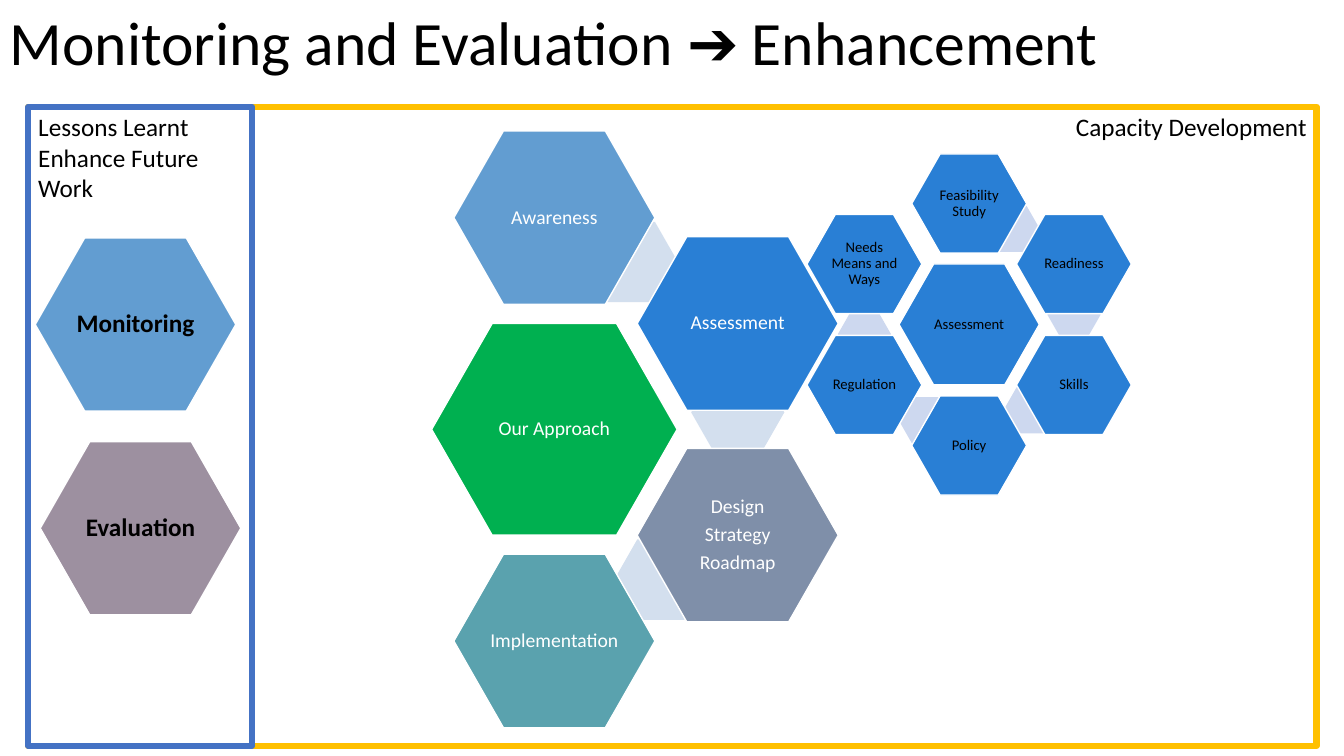
from math import cos, radians, sin

from pptx import Presentation
from pptx.dml.color import RGBColor
from pptx.enum.shapes import MSO_SHAPE
from pptx.enum.text import MSO_ANCHOR, PP_ALIGN
from pptx.util import Pt

HEXAGON, RECT = MSO_SHAPE.HEXAGON, MSO_SHAPE.RECTANGLE
TOP, MIDDLE = MSO_ANCHOR.TOP, MSO_ANCHOR.MIDDLE
LEFT, CENTER, RIGHT = PP_ALIGN.LEFT, PP_ALIGN.CENTER, PP_ALIGN.RIGHT

BLACK = RGBColor(0x00, 0x00, 0x00)
WHITE = RGBColor(0xFF, 0xFF, 0xFF)
GOLD = RGBColor(0xFF, 0xC0, 0x00)
NAVY = RGBColor(0x44, 0x72, 0xC4)
GREEN = RGBColor(0x00, 0xB0, 0x50)
SKY = RGBColor(0x62, 0x9D, 0xD1)
BLUE = RGBColor(0x29, 0x7F, 0xD5)
SLATE = RGBColor(0x7F, 0x8F, 0xA9)
TEAL = RGBColor(0x5A, 0xA2, 0xAE)
MAUVE = RGBColor(0x9D, 0x90, 0xA0)
PALE_BLUE = RGBColor(0xD3, 0xDF, 0xEE)
PALE_INDIGO = RGBColor(0xCD, 0xD8, 0xEF)

FRAME_TEXT = {"size": 18, "color": BLACK}
STEP_TEXT = {"size": 14, "color": WHITE}
PART_TEXT = {"size": 10.5, "color": BLACK}
REVIEW_TEXT = {"size": 18, "color": BLACK, "bold": True}
HEX_SIZE = (143.3, 123.8)


def set_attrs(obj, values):
    """Set each attribute named in the dict."""
    for name, value in values.items():
        setattr(obj, name, value)


def write(s, lines, look, frame, para):
    """Fill a shape with one paragraph per line."""
    tf = s.text_frame
    set_attrs(tf, {"word_wrap": True, **frame})
    for i, line in enumerate(lines):
        p = tf.add_paragraph() if i else tf.paragraphs[0]
        set_attrs(p, para)
        r = p.add_run()
        r.text = line
        set_attrs(r.font, {"name": "Calibri", "size": Pt(look["size"]),
                           "bold": look.get("bold", False)})
        r.font.color.rgb = look["color"]


def add_shape(sp, kind, box, fill=None, line=None, weight=1):
    """Add a flat shape in the box, with optional fill and line."""
    s = sp.add_shape(kind, *[Pt(v) for v in box])
    s.shadow.inherit = False
    for part, color in ((s.fill, fill), (s.line.fill, line)):
        if color is None:
            part.background()
        else:
            part.solid()
            part.fore_color.rgb = color
    if line is not None:
        s.line.width = Pt(weight)
    return s


def add_hexagon(sp, cx, cy, w, h, fill, lines=(), look=None):
    """Add a hexagon around a centre; one without text has no outline."""
    s = add_shape(sp, HEXAGON, (cx - w / 2, cy - h / 2, w, h), fill,
                  WHITE if lines else None)
    s.adjustments[0] = 0.286
    if lines:
        sides = ("left", "right", "top", "bottom")
        frame = {f"margin_{side}": Pt(1) for side in sides}
        write(s, lines, look, {"vertical_anchor": MIDDLE, **frame},
              {"alignment": CENTER, "line_spacing": 0.9,
               "space_after": Pt(0.35 * look["size"])})


def add_cluster(sp, cx, cy, radius, hub, ring, link_fill, look):
    """Add a hub hexagon ringed by hexagons every 60 degrees, with links."""
    def place(angle, distance, w, h, *rest):
        """Add a hexagon at a polar position, scaled by the radius."""
        a = radians(angle)
        add_hexagon(sp, cx + distance * radius * cos(a),
                    cy + distance * radius * sin(a),
                    w * radius, h * radius, *rest)

    place(0, 0, 1.16, 1, *hub, look)
    for i, (fill, lines) in enumerate(ring):
        angle = 60 * i - 90
        if i < len(ring) - 1:
            place(angle + 24.7, 0.87, 0.44, 0.38, link_fill)
        place(angle, 1, 0.95, 0.82, fill, lines, look)


def add_title(sp, x, y, w, h):
    """Add the slide title."""
    s = sp.add_textbox(Pt(x), Pt(y), Pt(w), Pt(h))
    write(s, ["Monitoring and Evaluation ➔ Enhancement"],
          {"size": 44, "color": BLACK}, {"vertical_anchor": MIDDLE},
          {"alignment": LEFT, "line_spacing": 0.9})


def add_frame(sp, box, color, lines, align):
    """Add an outlined frame with its heading at the top."""
    s = add_shape(sp, RECT, box, line=color, weight=4.5)
    write(s, lines, FRAME_TEXT, {"vertical_anchor": TOP}, {"alignment": align})


def add_capacity(sp, x, y, w, h):
    """Add the capacity development frame with both clusters."""
    add_frame(sp, (x, y, w, h), GOLD, ["Capacity Development"], RIGHT)
    steps = [(SKY, ["Awareness"]), (BLUE, ["Assessment"]),
             (SLATE, ["Design", "Strategy", "Roadmap"]),
             (TEAL, ["Implementation"])]
    add_cluster(sp, x + 375.8, y + 230.4, 151.2, (GREEN, ["Our Approach"]),
                steps, PALE_BLUE, STEP_TEXT)
    parts = ["Feasibility Study", "Readiness", "Skills", "Policy",
             "Regulation", "Needs Means and Ways"]
    add_cluster(sp, x + 672.1, y + 155.5, 86.4, (BLUE, ["Assessment"]),
                [(BLUE, [part]) for part in parts], PALE_INDIGO, PART_TEXT)


def add_lessons(sp, x, y, w, h):
    """Add the lessons learnt frame with its two review hexagons."""
    for cx, cy, fill, label in ((76.6, 155.5, SKY, "Monitoring"),
                                (80.2, 301, MAUVE, "Evaluation")):
        add_hexagon(sp, x + cx, y + cy, *HEX_SIZE, fill, [label], REVIEW_TEXT)
    add_frame(sp, (x, y, w, h), NAVY,
              ["Lessons Learnt", "Enhance Future Work"], LEFT)


def main():
    """Build the slide and save it."""
    prs = Presentation()
    prs.slide_width, prs.slide_height = Pt(960), Pt(540)
    sp = prs.slides.add_slide(prs.slide_layouts[6]).shapes
    add_capacity(sp, 20.2, 76.3, 920.2, 456.5)
    add_lessons(sp, 20.2, 76.3, 159.8, 456.5)
    add_title(sp, 0, 0.7, 828, 63.4)
    prs.save("out.pptx")


if __name__ == "__main__":
    main()
